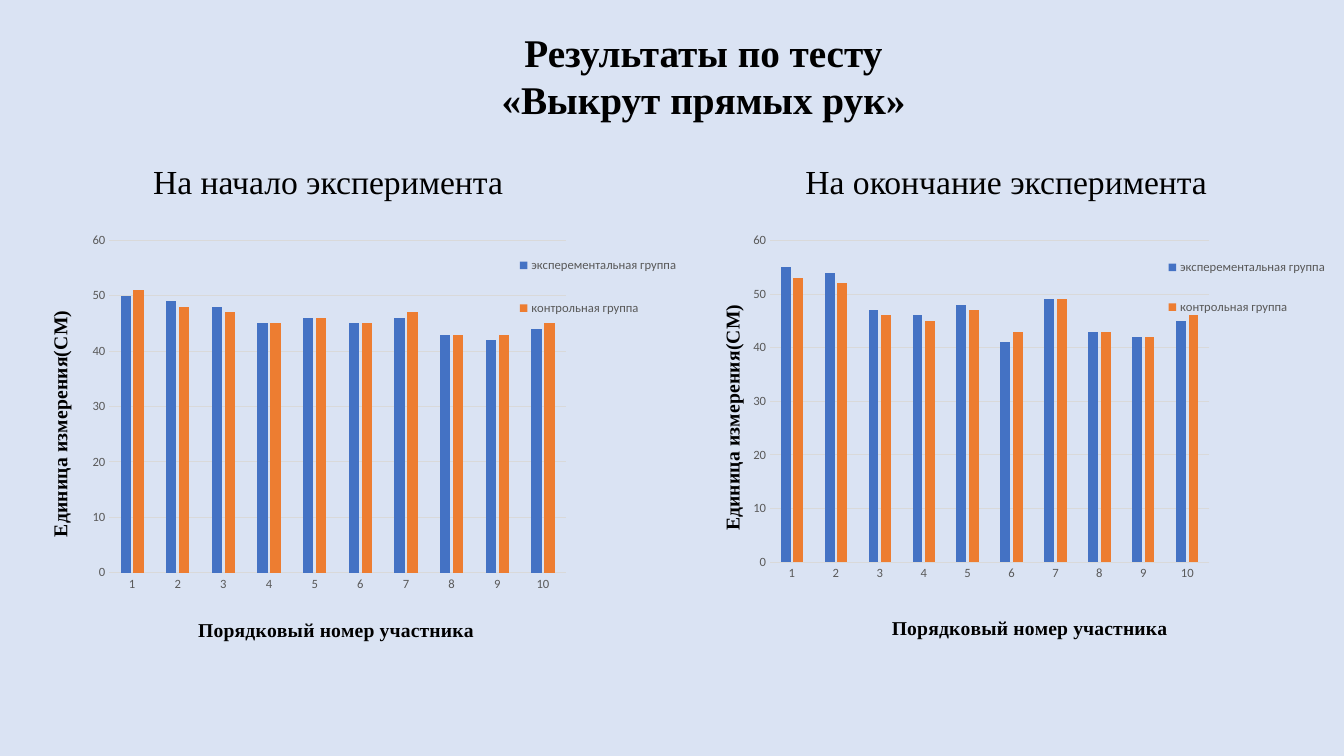
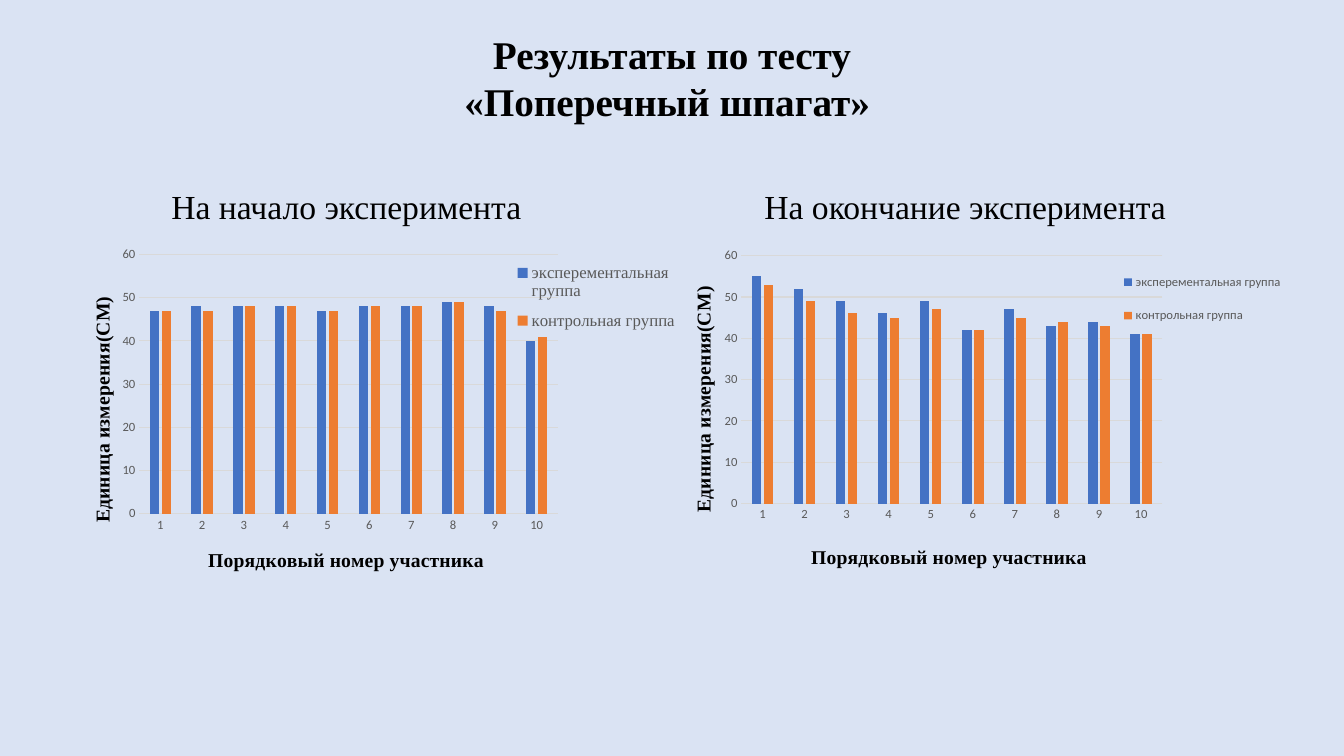
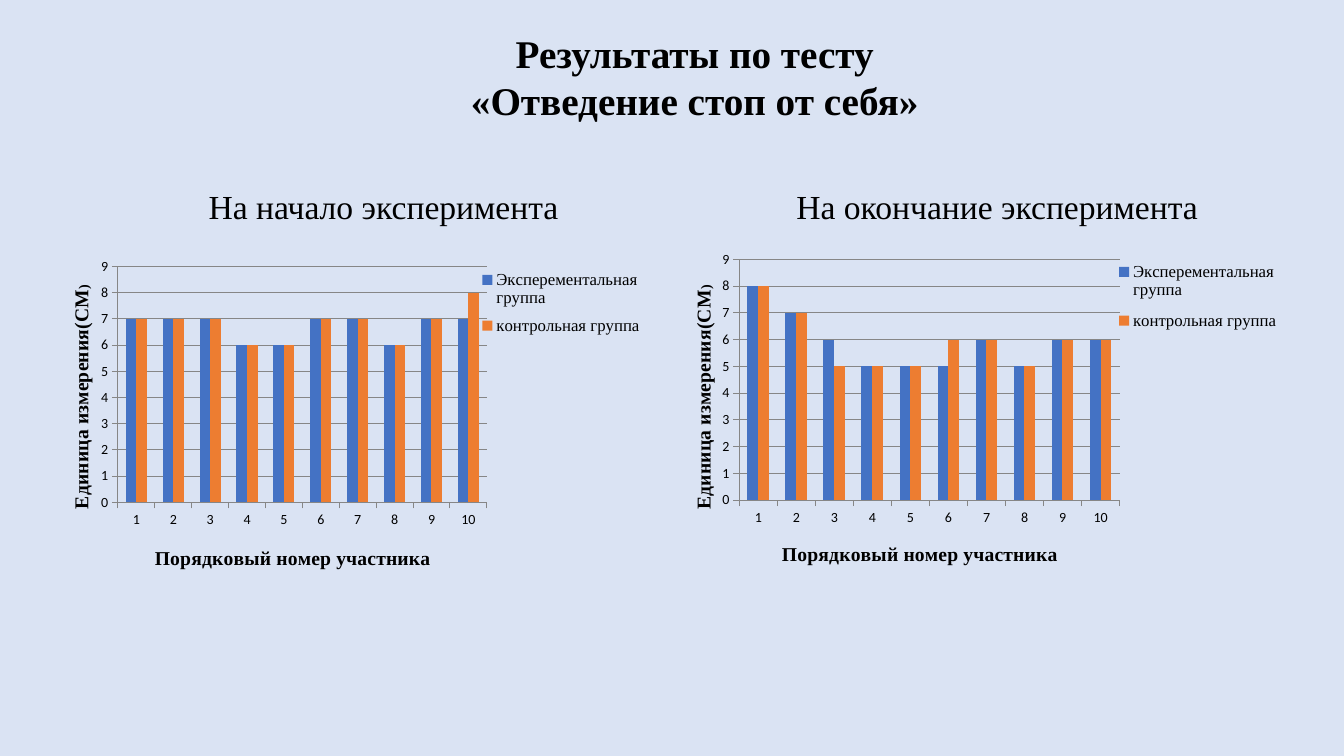
from dataclasses import dataclass

from lxml.etree import SubElement
from pptx import Presentation
from pptx.chart.data import CategoryChartData
from pptx.dml.color import RGBColor
from pptx.enum.chart import XL_CHART_TYPE, XL_LEGEND_POSITION, XL_TICK_MARK
from pptx.enum.text import MSO_AUTO_SIZE, PP_ALIGN
from pptx.oxml.ns import qn
from pptx.util import Inches, Pt


@dataclass(frozen=True)
class Theme:
    background: str = "DAE3F3"
    text: str = "000000"
    muted: str = "595959"
    pale_grid: str = "D9D9D9"
    dark_grid: str = "868686"
    experimental: str = "4472C4"
    control: str = "ED7D31"
    serif: str = "Times New Roman"
    sans: str = "Calibri"
    title_size: float = 28
    heading_size: float = 24
    axis_title_size: float = 14
    serif_legend_size: float = 12
    chart_size: float = 10
    small_size: float = 9


@dataclass(frozen=True)
class ChartStyle:
    names: tuple
    maximum: int
    unit: int
    gap: int
    overlap: int
    grid: str
    label_color: str
    label_size: float
    tick: XL_TICK_MARK
    value_line: bool
    legend_position: XL_LEGEND_POSITION
    bracket_size: float


THEME = Theme()
PALE = ChartStyle(
    ("эксперементальная группа ", "контрольная группа"), 60, 10, 219, -27,
    THEME.pale_grid, THEME.muted, THEME.small_size, XL_TICK_MARK.NONE, False,
    XL_LEGEND_POSITION.BOTTOM, THEME.axis_title_size)
DARK = ChartStyle(
    ("Эксперементальная группа", "контрольная группа"), 9, 1, 150, 0,
    THEME.dark_grid, THEME.text, THEME.chart_size, XL_TICK_MARK.OUTSIDE, True,
    XL_LEGEND_POSITION.RIGHT, THEME.chart_size)
CATEGORY_TITLE = "Порядковый номер участника"
VALUE_TITLE = "Единица измерения(СМ"


def set_layout(parent, index, fractions, target=None):
    """Place a chart part at fractions (x, y and maybe w, h) of the chart."""
    layout = parent.find(qn("c:layout"))
    if layout is None:
        layout = parent.makeelement(qn("c:layout"), {})
        parent.insert(index, layout)
    manual = SubElement(layout, qn("c:manualLayout"))
    if target:
        SubElement(manual, qn("c:layoutTarget"), val=target)
    for name in ("xMode", "yMode"):
        SubElement(manual, qn(f"c:{name}"), val="edge")
    for name, fraction in zip("xywh", fractions):
        SubElement(manual, qn(f"c:{name}"), val=f"{fraction:.4f}")


def to_fractions(place, box):
    """Turn slide inches into fractions of the chart box."""
    left, top, width, height = box
    position = [(place[0] - left) / width, (place[1] - top) / height]
    return position + [size / whole for size, whole in zip(place[2:], (width, height))]


class Deck:
    def __init__(self, theme):
        self.theme = theme
        self.presentation = Presentation()
        self.presentation.slide_width = Inches(13.33)
        self.presentation.slide_height = Inches(7.5)
        fill = self.presentation.slide_master.background.fill
        fill.solid()
        fill.fore_color.rgb = RGBColor.from_string(theme.background)
        self.slide = None

    def add_slide(self):
        self.slide = self.presentation.slides.add_slide(self.presentation.slide_layouts[6])

    def style_font(self, font, name, size, color, bold=False):
        font.name, font.size, font.bold = name, Pt(size), bold
        font.color.rgb = RGBColor.from_string(color)

    def text(self, box, content, size, bold=False, wrap=False, align=PP_ALIGN.CENTER):
        shape = self.slide.shapes.add_textbox(*map(Inches, box))
        text_frame = shape.text_frame
        text_frame.word_wrap = wrap
        text_frame.auto_size = MSO_AUTO_SIZE.SHAPE_TO_FIT_TEXT
        text_frame.text = content
        for paragraph in text_frame.paragraphs:
            paragraph.alignment = align
            for run in paragraph.runs:
                self.style_font(run.font, self.theme.serif, size, self.theme.text, bold)

    def title(self, box, content, wrap=False):
        self.text(box, content, self.theme.title_size, bold=True, wrap=wrap)

    def heading(self, left, top, width, content, align=PP_ALIGN.LEFT):
        self.text((left, top, width, 0.5), content, self.theme.heading_size, align=align)

    def axis_title(self, axis, parts, fractions, rotation):
        """Write the title from (text, size) parts."""
        axis.has_title = True
        title = axis.axis_title
        paragraph = title.text_frame.paragraphs[0]
        for content, size in parts:
            run = paragraph.add_run()
            run.text = content
            self.style_font(run.font, self.theme.serif, size, self.theme.text, True)
        body = title.element.find(f".//{qn('a:bodyPr')}")
        body.set("rot", str(rotation * 60000))
        body.set("vert", "horz")
        set_layout(title.element, 1, fractions)

    def style_line(self, line, color):
        line.color.rgb = RGBColor.from_string(color)
        line.width = Pt(0.75)

    def style_axis(self, axis, style):
        axis.major_tick_mark = style.tick
        axis.minor_tick_mark = XL_TICK_MARK.NONE
        self.style_font(axis.tick_labels.font, self.theme.sans, style.label_size, style.label_color)
        self.style_line(axis.format.line, style.grid)

    def legend(self, chart, style, fractions, serif):
        theme = self.theme
        chart.has_legend = True
        chart.legend.position = style.legend_position
        chart.legend.include_in_layout = False
        name, size = (theme.serif, theme.serif_legend_size) if serif else (theme.sans, theme.small_size)
        self.style_font(chart.legend.font, name, size, style.label_color)
        set_layout(chart.element.find(f".//{qn('c:legend')}"), 1, fractions)

    def chart(self, style, box, plot, values, category_title, value_title, legend,
              serif_legend=True):
        """Draw both groups; the titles and the legend are placed in slide inches."""
        theme = self.theme
        data = CategoryChartData()
        data.categories = [str(number) for number in range(1, 11)]
        for name, series_values in zip(style.names, values):
            data.add_series(name, series_values)
        chart = self.slide.shapes.add_chart(
            XL_CHART_TYPE.COLUMN_CLUSTERED, *map(Inches, box), data).chart
        chart.has_title = False
        self.style_font(chart.font, theme.sans, theme.chart_size, theme.text)

        bars = chart.plots[0]
        bars.gap_width, bars.overlap, bars.vary_by_categories = style.gap, style.overlap, False
        for series, color in zip(bars.series, (theme.experimental, theme.control)):
            series.format.fill.solid()
            series.format.fill.fore_color.rgb = RGBColor.from_string(color)
        set_layout(chart.element.find(f".//{qn('c:plotArea')}"), 0, plot, "inner")

        for axis in (chart.category_axis, chart.value_axis):
            self.style_axis(axis, style)
        value_axis = chart.value_axis
        value_axis.minimum_scale, value_axis.maximum_scale = 0, style.maximum
        value_axis.major_unit = style.unit
        value_axis.has_major_gridlines = True
        self.style_line(value_axis.major_gridlines.format.line, style.grid)
        if not style.value_line:
            value_axis.format.line.fill.background()

        size = theme.axis_title_size
        self.axis_title(chart.category_axis, [(CATEGORY_TITLE, size)],
                        to_fractions(category_title, box), 0)
        self.axis_title(value_axis, [(VALUE_TITLE, size), (")", style.bracket_size)],
                        to_fractions(value_title, box), -90)
        self.legend(chart, style, to_fractions(legend, box), serif_legend)


def add_shoulder_slide(deck):
    deck.add_slide()
    deck.title((4.85, 0.23, 4.35, 1.04), "Результаты по тесту \n«Выкрут прямых рук» ")
    deck.chart(PALE, (0.27, 2.12, 6.62, 4.35), (0.123, 0.061, 0.684, 0.758),
               [(50, 49, 48, 45, 46, 45, 46, 43, 42, 44),
                (51, 48, 47, 45, 46, 45, 47, 43, 43, 45)],
               (1.93, 6.09), (0.44, 3.05), (5.07, 2.28, 1.75, 1.13), serif_legend=False)
    deck.heading(1.42, 1.55, 3.71, "На начало эксперимента")
    deck.chart(PALE, (6.86, 2.26, 6.37, 4.21), (0.122, 0.03, 0.684, 0.758),
               [(55, 54, 47, 46, 48, 41, 49, 43, 42, 45),
                (53, 52, 46, 45, 47, 43, 49, 43, 42, 46)],
               (8.81, 6.07), (7.11, 2.99), (11.53, 2.33, 1.7, 1.04), serif_legend=False)
    deck.heading(7.89, 1.55, 4.31, "На окончание эксперимента")


def add_split_slide(deck):
    deck.add_slide()
    deck.title((3.33, 0.25, 6.67, 1.04), "Результаты по тесту\n«Поперечный шпагат» ", wrap=True)
    deck.chart(PALE, (0.61, 2.37, 6.23, 3.39), (0.124, 0.046, 0.666, 0.758),
               [(47, 48, 48, 48, 47, 48, 48, 49, 48, 40),
                (47, 47, 48, 48, 47, 48, 48, 49, 47, 41)],
               (2.03, 5.39), (0.86, 2.91), (5.09, 2.5, 1.65, 0.89))
    deck.chart(PALE, (6.75, 2.43, 6.1, 3.27), (0.099, 0.033, 0.684, 0.758),
               [(55, 52, 49, 46, 49, 42, 47, 43, 44, 41),
                (53, 49, 46, 45, 47, 42, 45, 44, 43, 41)],
               (8.01, 5.39), (6.82, 2.83), (11.09, 2.54, 1.7, 0.86), serif_legend=False)
    deck.heading(1.58, 1.8, 3.71, "На начало эксперимента", PP_ALIGN.CENTER)
    deck.heading(7.46, 1.8, 4.31, "На окончание эксперимента ", PP_ALIGN.CENTER)


def add_feet_slide(deck):
    deck.add_slide()
    deck.title((4.45, 0.24, 4.88, 1.04), "Результаты по тесту\n «Отведение стоп от себя» ")
    deck.chart(DARK, (0.42, 2.48, 6.14, 3.23), (0.122, 0.051, 0.596, 0.726),
               [(7, 7, 7, 6, 6, 7, 7, 6, 7, 7), (7, 7, 7, 6, 6, 7, 7, 6, 7, 8)],
               (1.5, 5.38), (0.65, 2.8), (4.74, 2.59, 1.65, 0.83))
    deck.heading(1.97, 1.8, 3.71, "На начало эксперимента")
    deck.heading(7.8, 1.8, 4.31, "На окончание эксперимента")
    deck.chart(DARK, (6.56, 2.4, 6.33, 3.39), (0.122, 0.051, 0.596, 0.705),
               [(8, 7, 6, 5, 5, 5, 6, 5, 6, 6), (8, 7, 5, 5, 5, 6, 6, 5, 6, 6)],
               (7.72, 5.34), (6.82, 2.8), (11.05, 2.48, 1.66, 0.92))


def main():
    deck = Deck(THEME)
    add_shoulder_slide(deck)
    add_split_slide(deck)
    add_feet_slide(deck)
    deck.presentation.save("out.pptx")


if __name__ == "__main__":
    main()
